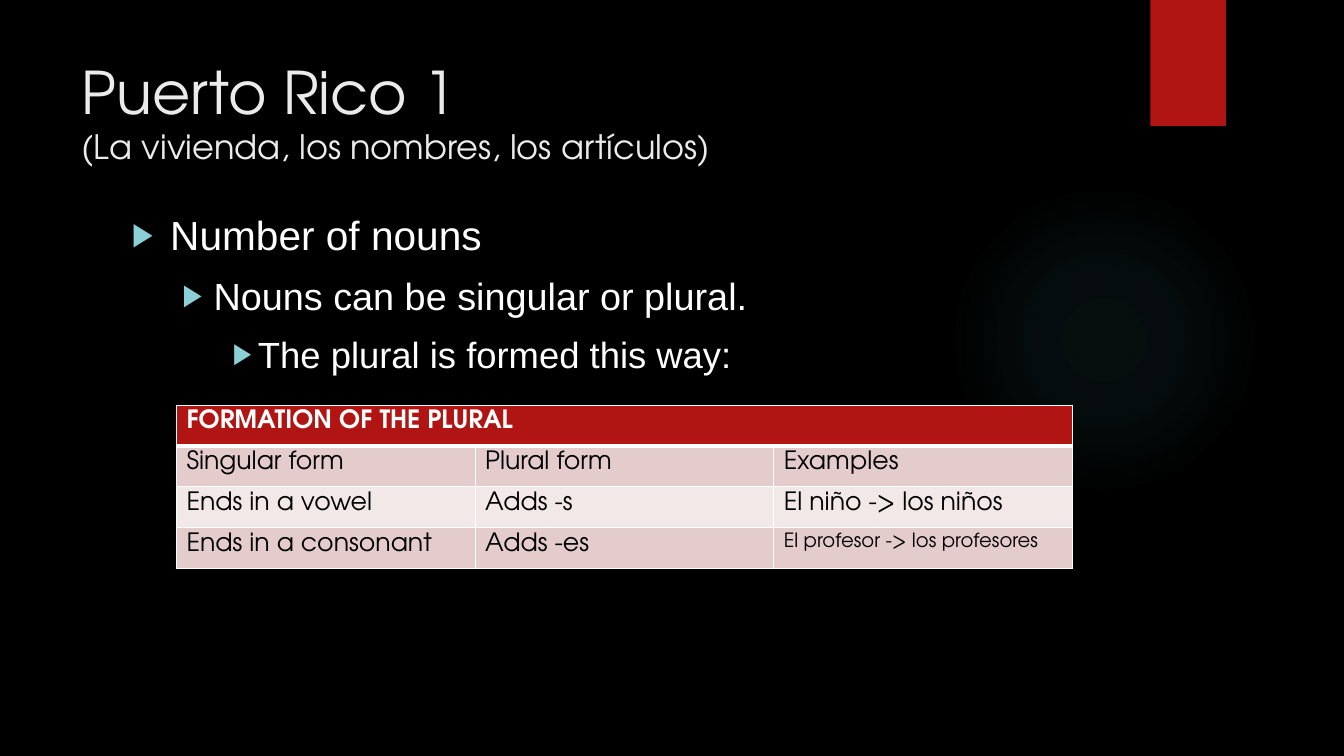
from lxml import etree
from pptx import Presentation, util as u
from pptx.dml.color import RGBColor
from pptx.enum import shapes, text
from pptx.oxml import parse_xml
from pptx.oxml.ns import nsdecls, qn

WIDE, HIGH = 13.33, 7.5
HEAD, BODY = "TeX Gyre Adventor", "Arial"
RED, TEAL, WHITE, BLACK = "B01513", "8AD0D6", "FFFFFF", "000000"
PINK, PALE = "E4CCCC", "F2E8E7"
GLOW = [(0, 7), (36, 6), (69, 0)]  # stop and opacity, in percent

TITLE = [("Puerto Rico 1", 42), ("(La vivienda, los nombres, los artículos)", 24)]
POINTS = [  # text, size, left margin, hanging indent
    ("Number of nouns", 29, 0.38, 0.38),
    ("Nouns can be singular or plural.", 27, 0.81, 0.31),
    ("The plural is formed this way:", 26, 1.25, 0.25),
]
CAPTION = "FORMATION OF THE PLURAL"
ROWS = [
    ("Singular form", "Plural form", "Examples"),
    ("Ends in a vowel", "Adds -s", "El niño -> los niños"),
    ("Ends in a consonant", "Adds -es", "El profesor -> los profesores"),
]
SMALL = ROWS[-1][-1]


def rgb(code):
    return RGBColor.from_string(code)


def box(*sides):
    return [u.Inches(side) for side in sides]


def write(para, words, size, face, color, bold=False):
    run = para.add_run()
    run.text = words
    font = run.font
    font.size, font.name, font.bold = u.Pt(size), face, bold
    font.color.rgb = rgb(color)


def plain(kind, *sides):
    """Add a preset shape without line or shadow."""
    shape = slide.shapes.add_shape(kind, *box(*sides))
    shape.shadow.inherit = False
    shape.line.fill.background()
    return shape


def bullet(para, left, hang):
    props = para._p.get_or_add_pPr()
    props.set("marL", str(u.Inches(left)))
    props.set("indent", str(-u.Inches(hang)))
    color = etree.SubElement(props, qn("a:buClr"))
    etree.SubElement(color, qn("a:srgbClr"), val=TEAL)
    etree.SubElement(props, qn("a:buSzPct"), val="80000")
    etree.SubElement(props, qn("a:buFont"), typeface=BODY)
    etree.SubElement(props, qn("a:buChar"), char="▶")


def border(cell, low):
    """Draw white cell borders; low is the width of the bottom one."""
    props = cell._tc.get_or_add_tcPr()
    for spot, (side, width) in enumerate(zip("LRTB", (1, 1, 1, low))):
        props.insert(spot, parse_xml(
            f'<a:ln{side} {nsdecls("a")} w="{u.Pt(width)}"><a:solidFill>'
            f'<a:srgbClr val="{WHITE}"/></a:solidFill></a:ln{side}>'))


def fill(cell, words, color, ink, size=18, bold=False, low=1):
    cell.margin_top = cell.margin_bottom = u.Inches(0.05)
    cell.vertical_anchor = text.MSO_ANCHOR.TOP
    cell.fill.solid()
    cell.fill.fore_color.rgb = rgb(color)
    border(cell, low)
    if words:
        write(cell.text_frame.paragraphs[0], words, size, HEAD, ink, bold)


deck = Presentation()
deck.slide_width, deck.slide_height = box(WIDE, HIGH)
slide = deck.slides.add_slide(deck.slide_layouts[5])
slide.background.fill.solid()
slide.background.fill.fore_color.rgb = rgb(BLACK)

glow = plain(shapes.MSO_SHAPE.OVAL, 9.41, 1.83, 3.08, 3.08)
glow.fill.background()
stops = "".join(
    f'<a:gs pos="{pos}000"><a:srgbClr val="50B9C1"><a:alpha val="{part}000"/>'
    f'</a:srgbClr></a:gs>' for pos, part in GLOW)
props = glow._element.spPr
props.replace(props.find(qn("a:noFill")), parse_xml(
    f'<a:gradFill {nsdecls("a")}><a:gsLst>{stops}</a:gsLst><a:path path="circle">'
    '<a:fillToRect l="50000" t="50000" r="50000" b="50000"/></a:path></a:gradFill>'))

flag = plain(shapes.MSO_SHAPE.RECTANGLE, 11.41, 0, 0.75, HIGH / 6)
flag.fill.solid()
flag.fill.fore_color.rgb = rgb(RED)

title = slide.shapes.title
title.left, title.top, title.width, title.height = box(0.71, 0.5, 10.29, 1.53)
frame = title.text_frame
frame.word_wrap = True
frame.auto_size = text.MSO_AUTO_SIZE.NONE
frame.vertical_anchor = text.MSO_ANCHOR.TOP
para = frame.paragraphs[0]
para.alignment = text.PP_ALIGN.LEFT
for row, (words, size) in enumerate(TITLE):
    if row:
        para.add_line_break()
    write(para, words, size, HEAD, "EBEBEB")

frame = slide.shapes.add_textbox(*box(1.21, 2.03, 9.78, 4.81)).text_frame
frame.word_wrap = True
for row, (words, size, left, hang) in enumerate(POINTS):
    para = frame.add_paragraph() if row else frame.paragraphs[0]
    para.level = row
    bullet(para, left, hang)
    if row:
        para.space_before = u.Pt(10)
    write(para, words, size, BODY, WHITE)

count = len(ROWS[0])
grid = slide.shapes.add_table(
    len(ROWS) + 1, count, *box(1.75, 4.02, WIDE * 2 / 3, 1.62)).table
for col in range(count):
    fill(grid.cell(0, col), "" if col else CAPTION, RED, WHITE, bold=True, low=3)
grid.cell(0, 0).merge(grid.cell(0, count - 1))
for row, line in enumerate(ROWS, 1):
    for col, words in enumerate(line):
        fill(grid.cell(row, col), words, PINK if row % 2 else PALE, BLACK,
             14 if words == SMALL else 18)

deck.save("out.pptx")
